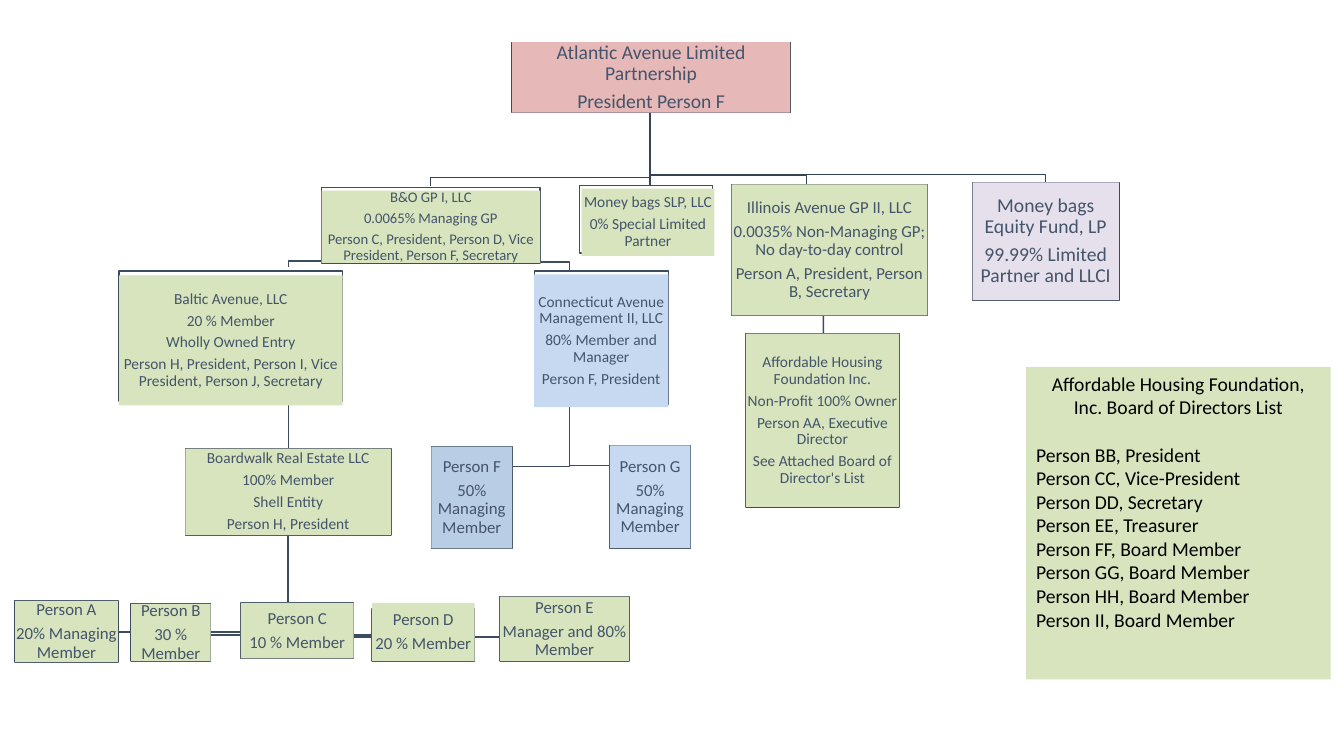
from lxml import etree
from pptx import Presentation, util as u
from pptx.dml.color import RGBColor
from pptx.enum import shapes, text
from pptx.oxml.ns import qn


def colour(part, value):
    if hasattr(part, "solid"):
        part.solid()
        part.fore_color.rgb = RGBColor.from_string(value)
    else:
        part.color.rgb = RGBColor.from_string(value)


def block(left, top, width, height, fill, edge=None):
    rect = slide.shapes.add_shape(
        shapes.MSO_SHAPE.RECTANGLE, *map(u.Pt, (left, top, width, height)))
    rect.shadow.inherit = False
    colour(rect.fill, fill)
    if edge:
        colour(rect.line, edge)
        rect.line.width = u.Pt(1)
    else:
        rect.line.fill.background()
    return rect


deck = Presentation()
deck.slide_width, deck.slide_height = u.Pt(960), u.Pt(540)
slide = deck.slides.add_slide(deck.slide_layouts[6])

GREEN, BLUE, STEEL, ROSE, LILAC = "D7E4BD", "C6D9F1", "B9CDE5", "E6B9B8", "E6E0EC"
TRUNK, BRANCH, INK = "364355", "3E4C60", "44546A"

directors = [
    "Affordable Housing Foundation, Inc. Board of Directors List",
    "Person BB, President",
    "Person CC, Vice-President",
    "Person DD, Secretary",
    "Person EE, Treasurer",
    "Person FF, Board Member",
    "Person GG, Board Member",
    "Person HH, Board Member",
    "Person II, Board Member",
]
board = block(733, 262.1, 217.4, 223.2, GREEN)
board.text_frame.text = "\n".join(directors)
board.text_frame.vertical_anchor = text.MSO_ANCHOR.TOP
for director in board.text_frame.paragraphs:
    director.alignment = text.PP_ALIGN.LEFT
    director.font.size, director.font.name = u.Pt(14), "Calibri"
    colour(director.font, "000000")
heading = board.text_frame.paragraphs[0]
heading.alignment = text.PP_ALIGN.CENTER
heading.space_after = u.Pt(17)

partnership_x, partnership_y = 464.4, 80.6
boardwalk_x, boardwalk_y = 205.9, 382.3
manager_x, manager_y = 406.8, 278.6
gp_x, gp_y = 307.4, 186.5

routes = [(TRUNK, [(partnership_x, partnership_y), (partnership_x, 159.1), (461.5, 159.1)])]
for bend, x, end in [(124.6, 746.6, 130.3), (125.3, 576, 131.8), (126.7, gp_x, 133.2)]:
    routes.append((TRUNK, [(partnership_x, partnership_y), (partnership_x, bend),
                           (x, bend), (x, end)]))
for bend, x in [(332.6, 435.6), (333.4, 365.8)]:
    routes.append((BRANCH, [(manager_x, manager_y), (manager_x, bend), (x, bend)]))
for bend, x, end in [(187.2, manager_x, 193.7), (gp_y, boardwalk_x, 190.8)]:
    routes.append((BRANCH, [(gp_x, gp_y), (gp_x, bend), (x, bend), (x, end)]))
for bend, x in [(455, 357.1), (453.6, 265.7), (453.6, 150.5), (451.4, 80.6)]:
    routes.append((BRANCH, [(boardwalk_x, boardwalk_y), (boardwalk_x, bend), (x, bend)]))

for shade, points in routes:
    start, *rest = [tuple(map(u.Pt, point)) for point in points]
    builder = slide.shapes.build_freeform(*start)
    builder.add_line_segments(rest, close=False)
    route = builder.convert_to_shape()
    route.shadow.inherit = False
    route.fill.background()
    colour(route.line, shade)
    route.line.width = u.Pt(1)

for ends in [(588.2, 221.8, 587.5, 343.4), (boardwalk_x, 283.7, boardwalk_x, 320.4)]:
    link = slide.shapes.add_connector(shapes.MSO_CONNECTOR.STRAIGHT, *map(u.Pt, ends))
    etree.SubElement(link._element.spPr, qn("a:effectLst"))
    colour(link.line, BRANCH)
    link.line.width = u.Pt(1)

flush = (0, 0, 0)
entities = [
    ((365.8, 30.2, 198.7, 50.4), flush, ROSE, 14,
     ["Atlantic Avenue Limited Partnership", "President Person F"]),
    ((229.7, 133.9, 156.2, 54), (0, 2.2, -2.2), GREEN, 10.5,
     ["B&O GP I, LLC", "0.0065% Managing GP",
      "Person C, President, Person D, Vice President, Person F, Secretary"]),
    ((85, 193.7, 159.8, 92.9), (0, 2.9, 0), GREEN, 11,
     ["Baltic Avenue, LLC", "20 % Member", "Wholly Owned Entry",
      "Person H, President, Person I, Vice President, Person J, Secretary"]),
    ((132.5, 320.4, 146.9, 61.9), flush, GREEN, 11,
     ["Boardwalk Real Estate LLC", "100% Member", "Shell Entity", "Person H, President"]),
    ((10.8, 429.1, 73.4, 43.9), flush, GREEN, 12, ["Person A", "20% Managing Member"]),
    ((93.6, 431.3, 56.9, 41), flush, GREEN, 12, ["Person B", "30 % Member"]),
    ((172.1, 430.6, 80.6, 39.6), flush, GREEN, 12, ["Person C", "10 % Member"]),
    ((265.7, 434.9, 73.4, 37.4), (0, -4.3, 4.3), GREEN, 12, ["Person D", "20 % Member"]),
    ((357.1, 426.2, 92.2, 46.1), flush, GREEN, 12, ["Person E", "Manager and 80% Member"]),
    ((381.6, 193.7, 95.8, 95), (0, 2.2, 0), BLUE, 11,
     ["Connecticut Avenue Management II, LLC", "80% Member and Manager",
      "Person F, President"]),
    ((308.2, 319, 57.6, 72.7), flush, STEEL, 12, ["Person F", "50% Managing Member"]),
    ((435.6, 318.2, 57.6, 73.4), flush, BLUE, 12, ["Person G", "50% Managing Member"]),
    ((522.7, 131.8, 139.7, 93.6), flush, GREEN, 12,
     ["Illinois Avenue GP II, LLC", "0.0035% Non-Managing GP; No day-to-day control",
      "Person A, President, Person B, Secretary"]),
    ((532.8, 238.3, 109.4, 123.8), flush, GREEN, 11,
     ["Affordable Housing Foundation Inc.", "Non-Profit 100% Owner",
      "Person AA, Executive Director", "See Attached Board of Director's List"]),
    ((694.8, 130.3, 104.4, 84.2), flush, LILAC, 14,
     ["Money bags Equity Fund, LP", "99.99% Limited Partner and LLCI"]),
    ((414, 132.5, 95, 48.2), (1.4, 2.2, 0), GREEN, 11,
     ["Money bags SLP, LLC", "0% Special Limited Partner"]),
]
frame_format = {"word_wrap": True, "vertical_anchor": text.MSO_ANCHOR.MIDDLE}
for side in ("left", "top", "right", "bottom"):
    frame_format["margin_" + side] = u.Pt(0.5)

for (left, top, width, height), (shift_x, shift_y, grow), fill, size, lines in entities:
    block(left, top, width, height, "FFFFFF", BRANCH)
    card = block(left + shift_x, top + shift_y, width, height + grow, fill)
    for key, value in frame_format.items():
        setattr(card.text_frame, key, value)
    card.text_frame.text = "\n".join(lines)
    line_format = {"alignment": text.PP_ALIGN.CENTER, "line_spacing": 0.9,
                   "space_after": u.Pt(0.35 * size)}
    for line in card.text_frame.paragraphs:
        for key, value in line_format.items():
            setattr(line, key, value)
        line.font.size, line.font.name = u.Pt(size), "Calibri"
        colour(line.font, INK)

deck.save("out.pptx")
